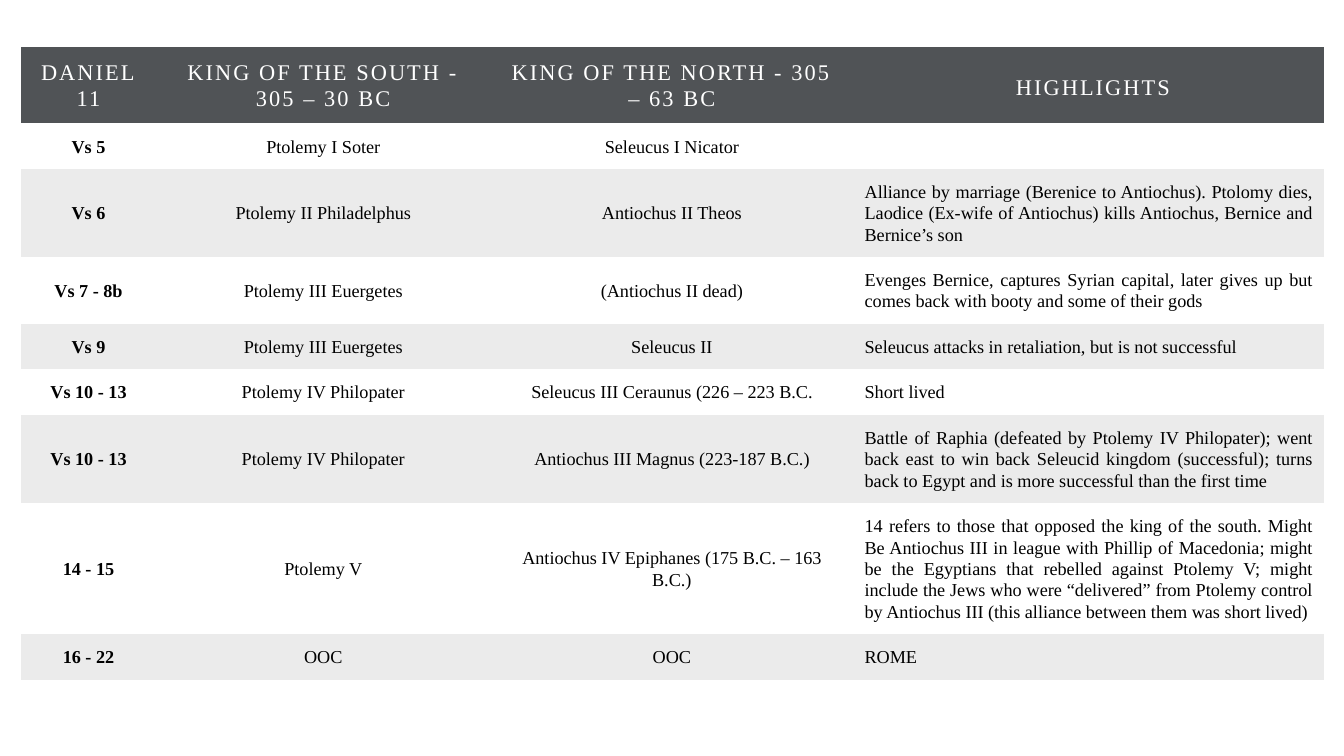
from pptx import Presentation, util as u
from pptx.dml.color import RGBColor
from pptx.enum import text

SLATE = RGBColor(0x50, 0x53, 0x56)
BAND = RGBColor(0xEB, 0xEB, 0xEB)
WHITE = RGBColor(0xFF, 0xFF, 0xFF)
BLACK = RGBColor(0, 0, 0)

PLAIN_STYLE = "{2D5ABB26-0587-4C30-8999-92F81FD0307C}"
CENTER, JUSTIFY = text.PP_ALIGN.CENTER, text.PP_ALIGN.JUSTIFY

HEADINGS = ["DANIEL 11", "KING OF THE SOUTH - 305 – 30 BC",
            "KING OF THE NORTH - 305 – 63 BC", "HIGHLIGHTS"]
COLUMN_WIDTHS = [3.4, 8.43, 9.14, 11.86]
HEADING_HEIGHT = 1.93

# Row height in cm, verses, king of the south, king of the north, highlights
REIGNS = [
    (1.15, "Vs 5", "Ptolemy I Soter", "Seleucus I Nicator", ""),
    (2.22, "Vs 6", "Ptolemy II Philadelphus", "Antiochus II Theos",
     "Alliance by marriage (Berenice to Antiochus). Ptolomy dies, Laodice "
     "(Ex-wife of Antiochus) kills Antiochus, Bernice and Bernice’s son"),
    (1.68, "Vs 7 - 8b", "Ptolemy III Euergetes", "(Antiochus II dead)",
     "Evenges Bernice, captures Syrian capital, later gives up but comes "
     "back with booty and some of their gods"),
    (1.15, "Vs 9", "Ptolemy III Euergetes", "Seleucus II",
     "Seleucus attacks in retaliation, but is not successful"),
    (1.15, "Vs 10 - 13", "Ptolemy IV Philopater",
     "Seleucus III Ceraunus (226 – 223 B.C.", "Short lived"),
    (2.22, "Vs 10 - 13", "Ptolemy IV Philopater",
     "Antiochus III Magnus (223-187 B.C.)",
     "Battle of Raphia (defeated by Ptolemy IV Philopater); went back east "
     "to win back Seleucid kingdom (successful); turns back to Egypt and is "
     "more successful than the first time"),
    (3.3, "14 - 15", "Ptolemy V",
     "Antiochus IV Epiphanes (175 B.C. – 163 B.C.)",
     "14 refers to those that opposed the king of the south. Might Be "
     "Antiochus III in league with Phillip of Macedonia; might be the "
     "Egyptians that rebelled against Ptolemy V; might include the Jews who "
     "were “delivered” from Ptolemy control by Antiochus III (this alliance "
     "between them was short lived)"),
    (1.15, "16 - 22", "OOC", "OOC", "ROME"),
]


class SlideBuilder:
    """Holds the style and the current slide."""

    font = "Times New Roman"
    heading_size, body_size = 16, 13
    inset = u.Cm(0.29)
    line_spacing = 1.07

    def __init__(self, slide):
        self.slide = slide

    def table(self, left, top, widths, heights):
        frame = self.slide.shapes.add_table(
            len(heights), len(widths), u.Cm(left), u.Cm(top),
            u.Cm(sum(widths)), u.Cm(sum(heights)))
        table = frame.table
        table.first_row = table.horz_banding = False
        table._tbl.tblPr[0].text = PLAIN_STYLE
        for column, width in zip(table.columns, widths):
            column.width = u.Cm(width)
        for row, height in zip(table.rows, heights):
            row.height = u.Cm(height)
        return table

    def cell(self, cell, align, fill=None):
        """Formats a cell and returns its paragraph."""
        cell.margin_left = cell.margin_right = self.inset
        cell.margin_top = cell.margin_bottom = self.inset
        cell.vertical_anchor = text.MSO_ANCHOR.MIDDLE
        if fill is None:
            cell.fill.background()
        else:
            cell.fill.solid()
            cell.fill.fore_color.rgb = fill
        paragraph = cell.text_frame.paragraphs[0]
        paragraph.alignment = align
        paragraph.line_spacing = self.line_spacing
        return paragraph

    def run(self, paragraph, words, size, color, bold=False, tracking=0):
        run = paragraph.add_run()
        run.text = words
        run.font.name = self.font
        run.font.size = u.Pt(size)
        run.font.bold = bold
        run.font.color.rgb = color
        if tracking:
            run.font._element.set("spc", str(int(tracking * 100)))

    def heading(self, cell, words):
        paragraph = self.cell(cell, CENTER, SLATE)
        if words == "HIGHLIGHTS":
            self.run(paragraph, " ", 20, WHITE, tracking=1.5)
        self.run(paragraph, words, self.heading_size, WHITE, tracking=1.5)

    def entry(self, cell, words, align, fill, bold):
        paragraph = self.cell(cell, align, fill)
        if words:
            self.run(paragraph, words, self.body_size, BLACK, bold)
        else:
            # Keeps an empty cell from stretching its row
            end = paragraph._p.get_or_add_endParaRPr()
            end.set("sz", str(self.body_size * 100))


def main():
    deck = Presentation()
    deck.slide_width, deck.slide_height = u.Cm(33.87), u.Cm(19.05)
    builder = SlideBuilder(deck.slides.add_slide(deck.slide_layouts[6]))

    # Table grid
    heights = [HEADING_HEIGHT] + [reign[0] for reign in REIGNS]
    kings = builder.table(0.53, 1.18, COLUMN_WIDTHS, heights)

    # Heading row
    for column, words in enumerate(HEADINGS):
        builder.heading(kings.cell(0, column), words)

    # Reigns, every second row shaded
    for row, (_, *entries) in enumerate(REIGNS, start=1):
        fill = BAND if row % 2 == 0 else None
        for column, words in enumerate(entries):
            align = JUSTIFY if column == 3 else CENTER
            builder.entry(kings.cell(row, column), words, align, fill,
                          bold=column == 0)

    deck.save("out.pptx")


if __name__ == "__main__":
    main()
